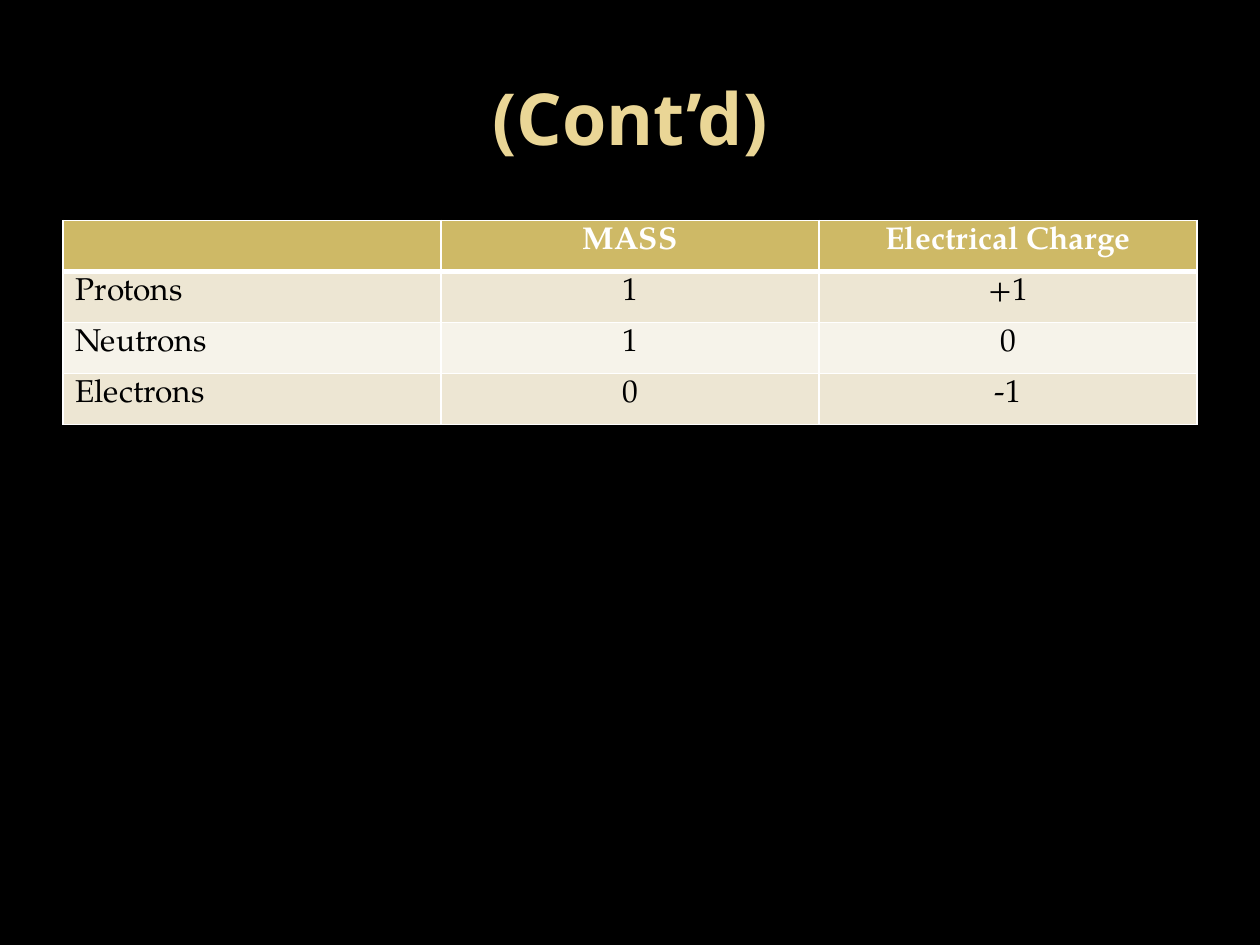
"""Build a slide with a table of subatomic particles."""
from typing import NamedTuple

from lxml.etree import SubElement
from pptx import Presentation
from pptx.dml.color import RGBColor
from pptx.enum.text import MSO_ANCHOR, PP_ALIGN
from pptx.oxml.ns import qn
from pptx.util import Inches, Pt

BLACK = RGBColor(0x00, 0x00, 0x00)
WHITE = RGBColor(0xFF, 0xFF, 0xFF)
PALE_GOLD = RGBColor(0xEA, 0xD6, 0x96)
GOLD = RGBColor(0xCE, 0xB9, 0x66)
BANDS = (RGBColor(0xED, 0xE6, 0xD3), RGBColor(0xF6, 0xF3, 0xEA))
TITLE_FONT, TABLE_FONT = "Noto Sans", "TeX Gyre Pagella"
WIDTH, HEIGHT = Inches(10), Inches(7.5)
MARGIN, CONTENT = 0.05, 0.9
ROW_HEIGHT = 0.054


class Particle(NamedTuple):
    """One row of the table."""
    name: str
    mass: str
    charge: str


HEADER = Particle("", "MASS", "Electrical Charge")
PARTICLES = (
    Particle("Protons", "1", "+1"),
    Particle("Neutrons", "1", "0"),
    Particle("Electrons", "0", "-1"),
)


def write(tf, text: str, *, font: str, size: float, color: RGBColor,
          bold: bool = False, align=PP_ALIGN.CENTER) -> None:
    """Write one formatted paragraph into a text frame."""
    p = tf.paragraphs[0]
    p.alignment = align
    p.font.size = Pt(size)
    if text:
        r = p.add_run()
        r.text = text
        r.font.name, r.font.size, r.font.bold = font, Pt(size), bold
        r.font.color.rgb = color


def set_borders(cell, top: float, bottom: float) -> None:
    """Draw white borders with the given top and bottom widths in points."""
    tc_pr = cell._tc.get_or_add_tcPr()
    for side, width in zip("LRTB", (1, 1, top, bottom)):
        ln = SubElement(tc_pr, qn(f"a:ln{side}"), w=str(Pt(width)))
        fill = SubElement(ln, qn("a:solidFill"))
        SubElement(fill, qn("a:srgbClr"), val=str(WHITE))


def add_title(s, text: str) -> None:
    """Place and format the slide title."""
    sp = s.shapes.title
    sp.left, sp.top = int(WIDTH * MARGIN), int(HEIGHT * 0.04)
    sp.width, sp.height = int(WIDTH * CONTENT), Inches(1.25)
    sp.text_frame.vertical_anchor = MSO_ANCHOR.MIDDLE
    write(sp.text_frame, text, font=TITLE_FONT, size=41, color=PALE_GOLD, bold=True)


def add_particle_table(s, rows: tuple[Particle, ...]) -> None:
    """Add the banded table whose first row is the header."""
    row_height = int(HEIGHT * ROW_HEIGHT)
    table = s.shapes.add_table(
        len(rows), len(HEADER), int(WIDTH * MARGIN), Inches(1.75),
        int(WIDTH * CONTENT), row_height * len(rows)).table
    for i, row in enumerate(rows):
        table.rows[i].height = row_height
        is_header = i == 0
        for j, text in enumerate(row):
            cell = table.cell(i, j)
            set_borders(cell, top=3 if i == 1 else 1, bottom=3 if is_header else 1)
            cell.fill.solid()
            cell.fill.fore_color.rgb = GOLD if is_header else BANDS[(i - 1) % 2]
            write(cell.text_frame, text, font=TABLE_FONT, size=18,
                  color=WHITE if is_header else BLACK, bold=is_header,
                  align=PP_ALIGN.CENTER if j else PP_ALIGN.LEFT)


def main() -> None:
    """Build and save the presentation."""
    prs = Presentation()
    prs.slide_width, prs.slide_height = WIDTH, HEIGHT
    s = prs.slides.add_slide(prs.slide_layouts[5])
    s.background.fill.solid()
    s.background.fill.fore_color.rgb = BLACK
    add_title(s, "(Cont’d)")
    add_particle_table(s, (HEADER, *PARTICLES))
    prs.save("out.pptx")


if __name__ == "__main__":
    main()
